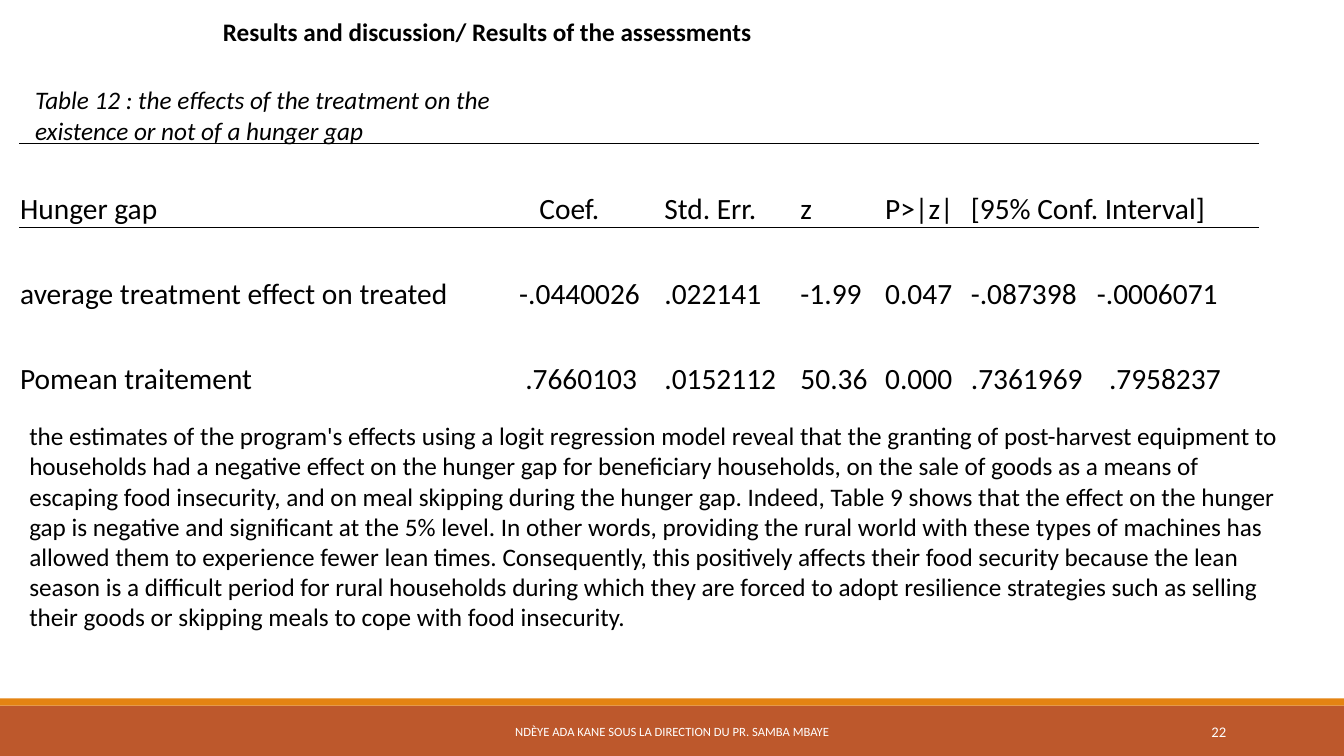
from dataclasses import dataclass

from lxml import etree
from pptx import Presentation
from pptx.dml.color import RGBColor
from pptx.enum.shapes import MSO_SHAPE as Shape
from pptx.enum.text import MSO_ANCHOR as Anchor, MSO_AUTO_SIZE as AutoSize, PP_ALIGN as Align
from pptx.oxml.ns import qn
from pptx.util import Inches, Pt


@dataclass(frozen=True)
class Theme:
    font: str = "Calibri"
    ink: str = "000000"
    paper: str = "FFFFFF"
    footer_bar: str = "BD582C"
    accent_bar: str = "E48312"
    text_size: float = 18
    table_size: float = 21
    footer_size: float = 9
    number_size: float = 10.5
    rule_width: float = 0.5


class SlideBuilder:
    def __init__(self, deck, theme):
        self.theme = theme
        self.page = deck.slides.add_slide(deck.slide_layouts[1])

    def format_text(self, frame, text, size=None, color=None, bold=False, italic=False,
                    align=Align.LEFT, anchor=Anchor.TOP):
        frame.text = text
        frame.word_wrap = True
        frame.vertical_anchor = anchor
        para = frame.paragraphs[0]
        para.alignment = align
        para.space_before = Pt(0)
        for span in para.runs:
            font = span.font
            font.name = self.theme.font
            font.size = Pt(size or self.theme.text_size)
            font.bold, font.italic = bold, italic
            font.color.rgb = RGBColor.from_string(color or self.theme.ink)
        return para

    def placeholder(self, index, area, text, **style):
        box = self.page.placeholders[index]
        box.left, box.top, box.width, box.height = map(Inches, area)
        para = self.format_text(box.text_frame, text, **style)
        box.text_frame.auto_size = AutoSize.NONE
        return para

    def body(self, area, text):
        properties = self.placeholder(1, area, text)._p.get_or_add_pPr()
        properties.set("marL", "0")
        properties.set("indent", "0")
        etree.SubElement(properties, qn("a:buNone"))

    def text(self, area, text, **style):
        box = self.page.shapes.add_textbox(*map(Inches, area))
        self.format_text(box.text_frame, text, **style)

    def bar(self, area, color):
        bar = self.page.shapes.add_shape(Shape.RECTANGLE, *map(Inches, area))
        bar.shadow.inherit = False
        bar.fill.solid()
        bar.fill.fore_color.rgb = RGBColor.from_string(color)
        bar.line.fill.background()

    def cell_borders(self, cell, ruled_sides):
        properties = cell._tc.get_or_add_tcPr()
        for position, side in enumerate("LRTB"):
            line = etree.Element(qn(f"a:ln{side}"), w=str(Pt(self.theme.rule_width)))
            if side in ruled_sides:
                fill = etree.SubElement(line, qn("a:solidFill"))
                etree.SubElement(fill, qn("a:srgbClr"), val=self.theme.ink)
            else:
                etree.SubElement(line, qn("a:noFill"))
            properties.insert(position, line)

    def table(self, area, widths, rows, ruled_sides, indents, tab_stops):
        frame = self.page.shapes.add_table(len(rows), len(widths), *map(Inches, area))
        table = frame.table
        table.first_row = table.horz_banding = False
        for column, width in zip(table.columns, widths):
            column.width = Inches(width)
        for r, values in enumerate(rows):
            for c, value in enumerate(values):
                cell = table.cell(r, c)
                cell.margin_left = cell.margin_right = cell.margin_top = Inches(0.01)
                cell.margin_bottom = 0
                para = self.format_text(cell.text_frame, value, size=self.theme.table_size)
                cell.vertical_anchor = Anchor.BOTTOM
                cell.fill.background()
                self.cell_borders(cell, ruled_sides[r])
                properties = para._p.get_or_add_pPr()
                if c == 1:
                    properties.set("marL", str(Inches(indents[r])))
                if "\t" in value:
                    tabs = etree.SubElement(properties, qn("a:tabLst"))
                    etree.SubElement(tabs, qn("a:tab"), pos=str(Inches(tab_stops[r])), algn="l")


def main():
    deck = Presentation()
    deck.slide_width, deck.slide_height = Inches(13.33), Inches(7.5)
    theme = Theme()
    slide = SlideBuilder(deck, theme)

    # Footer band
    slide.bar((0, 7, 13.33, 0.5), theme.footer_bar)
    slide.bar((0, 6.93, 13.33, 0.07), theme.accent_bar)
    slide.text((4.03, 7.06, 5.27, 0.4), "NDÈYE ADA KANE SOUS LA DIRECTION DU PR. SAMBA MBAYE",
               size=theme.footer_size, color=theme.paper, align=Align.CENTER, anchor=Anchor.MIDDLE)
    slide.text((10.83, 7.06, 1.43, 0.4), "22", size=theme.number_size, color=theme.paper,
               align=Align.RIGHT, anchor=Anchor.MIDDLE)

    # Heading and table caption
    slide.placeholder(0, (2.11, 0.11, 7.05, 0.4),
                      "Results and discussion/ Results of the assessments", bold=True)
    slide.text((0.25, 0.79, 4.75, 1.01),
               "Table 12 : the effects of the treatment on the existence or not of a hunger gap",
               italic=True)

    # Discussion
    slide.body(
        (0.19, 4.12, 12.63, 2.22),
        "the estimates of the program's effects using a logit regression model reveal that the "
        "granting of post-harvest equipment to households had a negative effect on the hunger gap "
        "for beneficiary households, on the sale of goods as a means of escaping food insecurity, "
        "and on meal skipping during the hunger gap. Indeed, Table 9 shows that the effect on the "
        "hunger gap is negative and significant at the 5% level. In other words, providing the "
        "rural world with these types of machines has allowed them to experience fewer lean times. "
        "Consequently, this positively affects their food security because the lean season is a "
        "difficult period for rural households during which they are forced to adopt resilience "
        "strategies such as selling their goods or skipping meals to cope with food insecurity.")

    # Regression results
    slide.table(
        (0.19, 1.42, 12.3, 2.52),
        widths=(4.82, 1.57, 1.35, 0.84, 0.85, 2.87),
        rows=(
            ("Hunger gap", "Coef.", "Std. Err.", "z", "P>|z|", "[95% Conf. Interval]"),
            ("average treatment effect on treated", "-.0440026", ".022141", "-1.99", "0.047",
             "-.087398\t-.0006071"),
            ("Pomean traitement", ".7660103", ".0152112", "50.36", "0.000",
             ".7361969\t.7958237"),
        ),
        ruled_sides=("TB", "T", ""),
        indents=(0.33, 0.13, 0.19),
        tab_stops=(0, 1.25, 1.37))

    deck.save("out.pptx")


if __name__ == "__main__":
    main()
